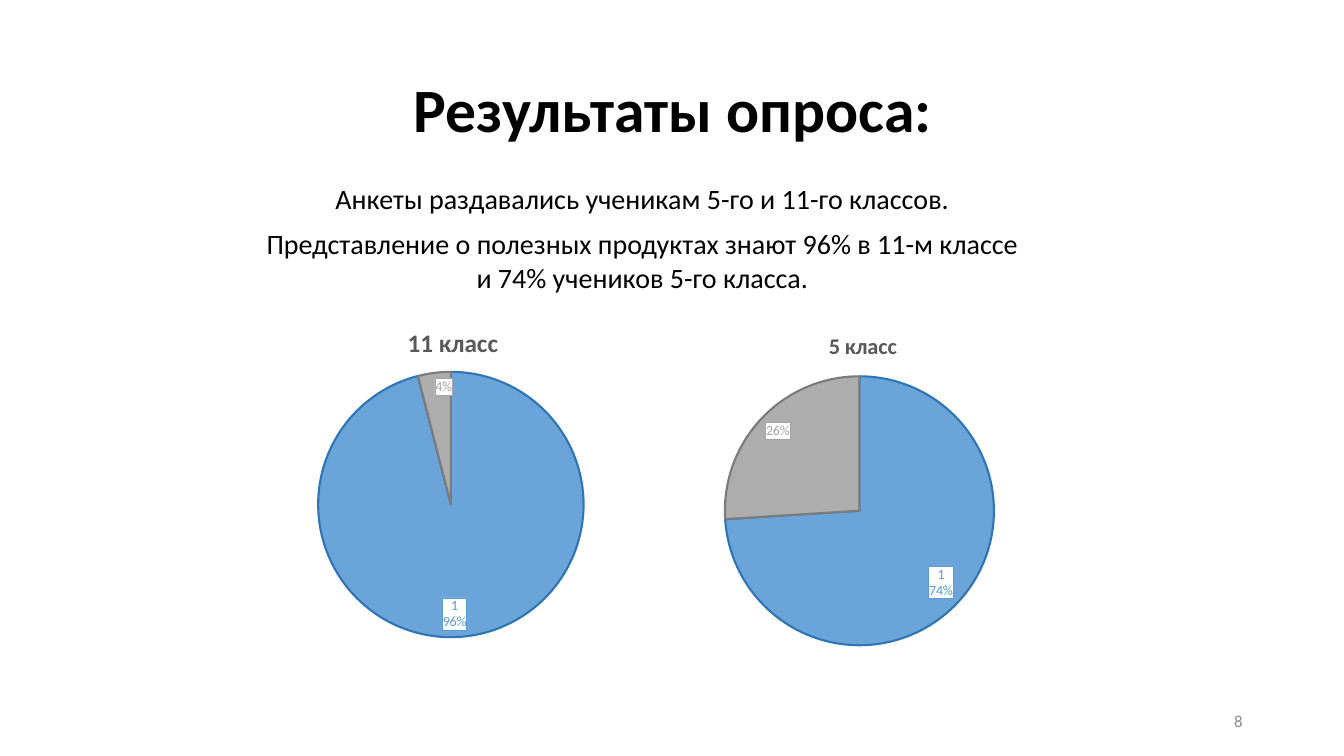
import pptx
import pptx.util
import pptx.oxml
import pptx.dml.color
import pptx.chart.data
import pptx.enum.chart
import pptx.enum.text
from lxml import etree

Pt = pptx.util.Pt
Align = pptx.enum.text.PP_ALIGN
Mid = pptx.enum.text.MSO_ANCHOR.MIDDLE
NS = ('xmlns:c="http://schemas.openxmlformats.org/drawingml/2006/chart" '
      'xmlns:a="http://schemas.openxmlformats.org/drawingml/2006/main"')

deck = pptx.Presentation()
deck.slide_width = pptx.util.Inches(13.33)
deck.slide_height = pptx.util.Inches(7.5)
wide, high = deck.slide_width, deck.slide_height
slide = deck.slides.add_slide(deck.slide_layouts[5])


def style(font, size, color, bold=False):
    font.name = "Calibri"
    font.size = Pt(size)
    font.bold = bold
    font.color.rgb = pptx.dml.color.RGBColor.from_string(color)


def span(x, y, w, h):
    return int(x * wide), int(y * high), int(w * wide), int(h * high)


title = slide.shapes.title
title.left, title.top, title.width, title.height = span(0.069, 0.053, 0.863, 0.193)
title.text_frame.vertical_anchor = Mid
para = title.text_frame.paragraphs[0]
para.alignment = Align.CENTER
para.line_spacing = 0.9
run = para.add_run()
run.text = "Результаты опроса:"
style(run.font, 44, "000000", True)

body = slide.shapes.add_textbox(*span(0.138, 0.231, 0.68, 0.167)).text_frame
body.word_wrap = True
lines = [
    ("Анкеты раздавались ученикам 5-го и 11-го классов.", 1.07, 8),
    ("Представление о полезных продуктах знают 96% в 11-м классе", 1.0, 0),
    ("и 74% учеников 5-го класса.", 1.0, 0),
]
for row, (text, lead, after) in enumerate(lines):
    para = body.add_paragraph() if row else body.paragraphs[0]
    para.alignment = Align.CENTER
    para.line_spacing = lead
    para.space_after = Pt(after)
    run = para.add_run()
    run.text = text
    style(run.font, 20, "000000")

pies = [
    ("11 класс", 18, 96, (0.138, 0.396, 0.395, 0.468), (0.41, 0.06), (0.25, 0.2, 0.5, 0.76)),
    ("5 класс", 16, 74, (0.478, 0.409, 0.323, 0.464), (0.42, 0.05), (0.19, 0.19, 0.62, 0.77)),
]
parts = [("5B9BD5", "2E75B6", 1), ("ED7D31", "C55A11", 1), ("A5A5A5", "7B7B7B", 0)]

for name, size, share, box, head, plot in pies:
    data = pptx.chart.data.CategoryChartData()
    data.categories = ["1", "2", "3"]
    data.add_series("Series 1", (share, None, 100 - share))
    chart = slide.shapes.add_chart(
        pptx.enum.chart.XL_CHART_TYPE.PIE, *span(*box), data).chart
    style(chart.font, 10, "000000")
    chart.has_legend = False
    chart.has_title = True
    run = chart.chart_title.text_frame.paragraphs[0].add_run()
    run.text = name
    style(run.font, size, "595959", True)
    chart.plots[0].vary_by_categories = True

    tree = chart.chart_title._element
    area = chart._chartSpace.chart.plotArea
    for node, spot in ((tree, head), (area, plot)):
        for old in node.findall(pptx.oxml.ns.qn("c:layout")):
            node.remove(old)
        inner = '<c:layoutTarget val="inner"/>' if node is area else ""
        keys = "xywh"[:len(spot)]
        modes = "".join(f'<c:{k}Mode val="edge"/>' for k in keys[:2])
        sizes = "".join(f'<c:{k} val="{v}"/>' for k, v in zip(keys, spot))
        frame = pptx.oxml.parse_xml(
            f"<c:layout {NS}><c:manualLayout>{inner}{modes}{sizes}</c:manualLayout></c:layout>")
        node.insert(1 if node is tree else 0, frame)

    ser = chart.plots[0].series[0]
    marks = ser.data_labels
    marks.show_value = False
    marks.show_percentage = True
    marks.show_category_name = True
    marks.position = pptx.enum.chart.XL_LABEL_POSITION.INSIDE_END
    for i, (color, edge, named) in enumerate(parts):
        point = ser.points[i].format
        point.fill.solid()
        point.fill.fore_color.rgb = pptx.dml.color.RGBColor.from_string(color)
        tint = point.fill._xPr.find(".//" + pptx.oxml.ns.qn("a:srgbClr"))
        etree.SubElement(tint, pptx.oxml.ns.qn("a:alpha"), val="90000")
        point.line.width = Pt(1.5)
        point.line.color.rgb = pptx.dml.color.RGBColor.from_string(edge)
        solid = f'<a:solidFill><a:srgbClr val="{color}"/></a:solidFill>'
        label = pptx.oxml.parse_xml(
            f'<c:dLbl {NS}><c:idx val="{i}"/><c:numFmt formatCode="0%" sourceLinked="0"/>'
            f'<c:spPr><a:solidFill><a:srgbClr val="FFFFFF"/></a:solidFill>'
            f'<a:ln w="6350">{solid}</a:ln></c:spPr>'
            f'<c:txPr><a:bodyPr/><a:p><a:pPr><a:defRPr sz="1000" b="0">{solid}'
            f'<a:latin typeface="Calibri"/></a:defRPr></a:pPr></a:p></c:txPr>'
            f'<c:dLblPos val="inEnd"/><c:showLegendKey val="0"/><c:showVal val="0"/>'
            f'<c:showCatName val="{named}"/><c:showSerName val="0"/><c:showPercent val="1"/>'
            f'<c:showBubbleSize val="0"/><c:separator>\n</c:separator></c:dLbl>')
        marks._element.insert(i, label)

foot = slide.shapes.add_textbox(*span(0.707, 0.927, 0.225, 0.053)).text_frame
foot.word_wrap = True
foot.vertical_anchor = Mid
para = foot.paragraphs[0]
para.alignment = Align.RIGHT
run = para.add_run()
run.text = "8"
style(run.font, 12, "8C8C8C")

deck.save("out.pptx")
